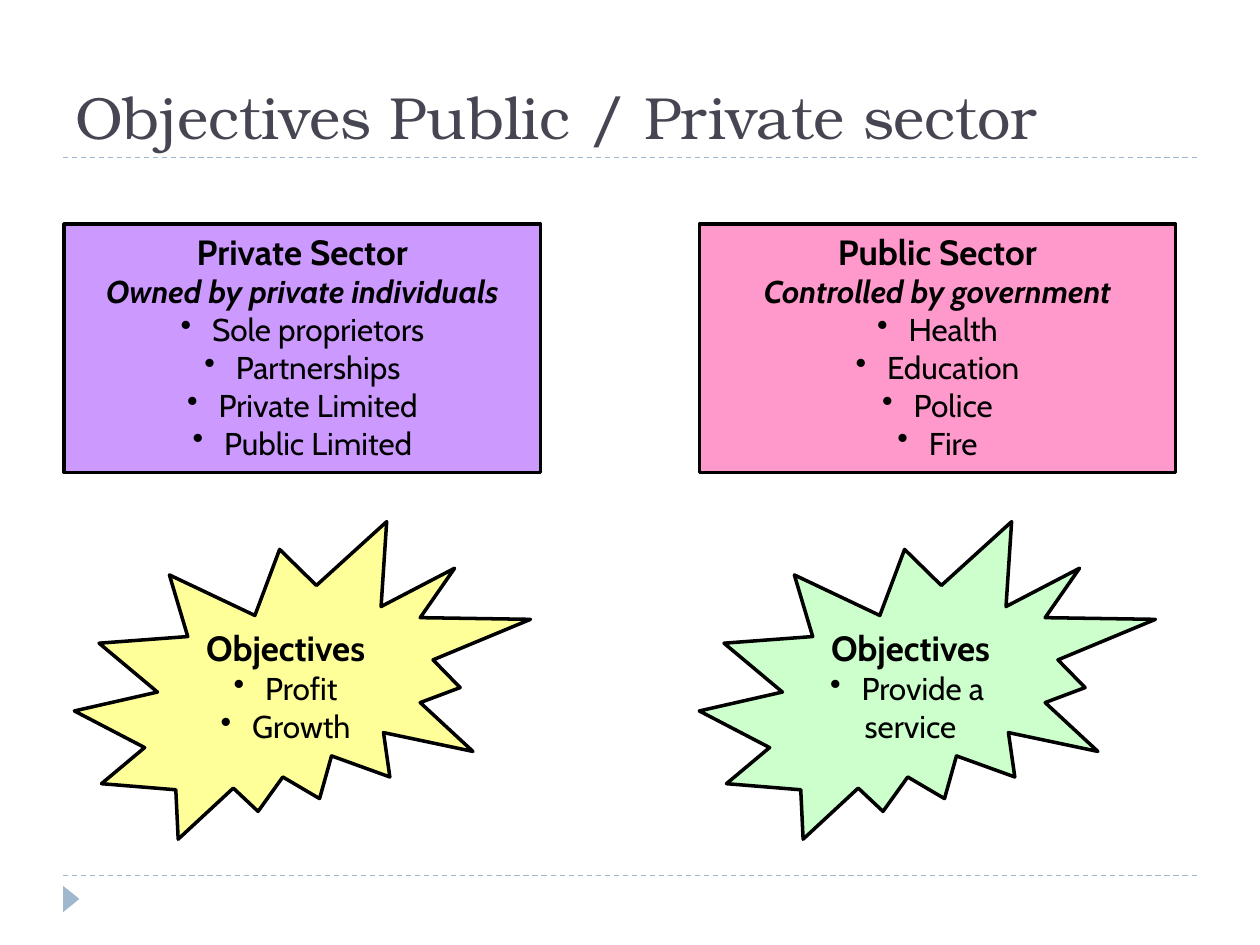
from pptx import Presentation
from pptx.util import Inches, Pt
from pptx.dml.color import RGBColor
from pptx.enum.dml import MSO_LINE
from pptx.enum.shapes import MSO_SHAPE as Shape, MSO_CONNECTOR as Conn
from pptx.enum.text import PP_ALIGN as Align, MSO_ANCHOR as Anchor
from pptx.oxml.ns import qn
from lxml.etree import SubElement

TITLE = "Objectives Public / Private sector"
# Each line: (kind, text)
SECTORS = [
    {"fill": "violet", "left": 0.51, "lines": [
        ("head", "Private Sector"), ("sub", "Owned by private individuals"),
        ("item", "Sole proprietors"), ("item", "Partnerships"),
        ("item", "Private Limited"), ("item", "Public Limited")]},
    {"fill": "pink", "left": 5.55, "lines": [
        ("head", "Public Sector"), ("sub", "Controlled by government"),
        ("item", "Health"), ("item", "Education"),
        ("item", "Police"), ("item", "Fire")]},
]
GOALS = [
    {"fill": "yellow", "left": 0.59, "lines": [
        ("head", "Objectives"), ("item", "Profit"), ("item", "Growth")]},
    {"fill": "green", "left": 5.55, "lines": [
        ("head", "Objectives"), ("item", "Provide a "), ("plain", "service")]},
]
# Kind: (size, bold, italic)
STYLES = {"head": (20, True, False), "sub": (18, True, True),
          "item": (18, False, False), "plain": (18, False, False)}
COLORS = {"violet": "CC99FF", "pink": "FF99CC", "yellow": "FFFF99",
          "green": "CCFFCC", "black": "000000", "title": "464653",
          "rule": "9FB8CD"}
RULES = (6.95, 1.25)
INDENT = Inches(0.25)


def rgb(name):
    return RGBColor.from_string(COLORS[name])


def set_font(run, face, size, color, bold=False, italic=False):
    font = run.font
    font.name, font.size = face, Pt(size)
    font.bold, font.italic = bold, italic
    font.color.rgb = rgb(color)


def add_bullet(para):
    props = para._p.get_or_add_pPr()
    props.set("marL", str(INDENT))
    props.set("indent", str(-INDENT))
    SubElement(props, qn("a:buChar"), char="•")


def add_rule(slide, top):
    y = Inches(top)
    rule = slide.shapes.add_connector(
        Conn.STRAIGHT, Inches(0.5), y, Inches(9.5), y)
    rule.line.color.rgb = rgb("rule")
    rule.line.width = Pt(0.75)
    rule.line.dash_style = MSO_LINE.DASH
    SubElement(rule._element.spPr, qn("a:effectLst"))


def add_shape(slide, kind, box, fill):
    shape = slide.shapes.add_shape(kind, *map(Inches, box))
    shape.shadow.inherit = False
    shape.fill.solid()
    shape.fill.fore_color.rgb = rgb(fill)
    return shape


def add_panel(slide, kind, data, top, size, anchor):
    """Add an outlined shape with a heading and its list."""
    shape = add_shape(slide, kind, (data["left"], top, *size), data["fill"])
    shape.line.color.rgb = rgb("black")
    shape.line.width = Pt(2)
    frame = shape.text_frame
    frame.word_wrap = False
    frame.vertical_anchor = anchor
    frame.text = "\n".join(text for _, text in data["lines"])
    for para, (style, _) in zip(frame.paragraphs, data["lines"]):
        para.alignment = Align.CENTER
        size, bold, italic = STYLES[style]
        set_font(para.runs[0], "Cabin", size, "black", bold, italic)
        if style == "item":
            add_bullet(para)


def add_title(slide):
    box = slide.shapes.add_textbox(*map(Inches, (0.5, 0.25, 9, 1)))
    frame = box.text_frame
    frame.word_wrap = True
    frame.vertical_anchor = Anchor.BOTTOM
    frame.text = TITLE
    set_font(frame.paragraphs[0].runs[0], "TeX Gyre Bonum", 34, "title")


def main():
    deck = Presentation()
    deck.slide_width, deck.slide_height = Inches(10), Inches(7.5)
    slide = deck.slides.add_slide(deck.slide_layouts[6])
    for top in RULES:
        add_rule(slide, top)
    mark = add_shape(slide, Shape.ISOSCELES_TRIANGLE,
                     (0.46, 7.07, 0.21, 0.13), "rule")
    mark.rotation = 90
    mark.line.fill.background()
    add_title(slide)
    for sector, goal in zip(SECTORS, GOALS):
        add_panel(slide, Shape.RECTANGLE, sector, 1.78, (3.78, 1.97),
                  Anchor.TOP)
        add_panel(slide, Shape.EXPLOSION2, goal, 4.14, (3.62, 2.52),
                  Anchor.MIDDLE)
    deck.save("out.pptx")


if __name__ == "__main__":
    main()
